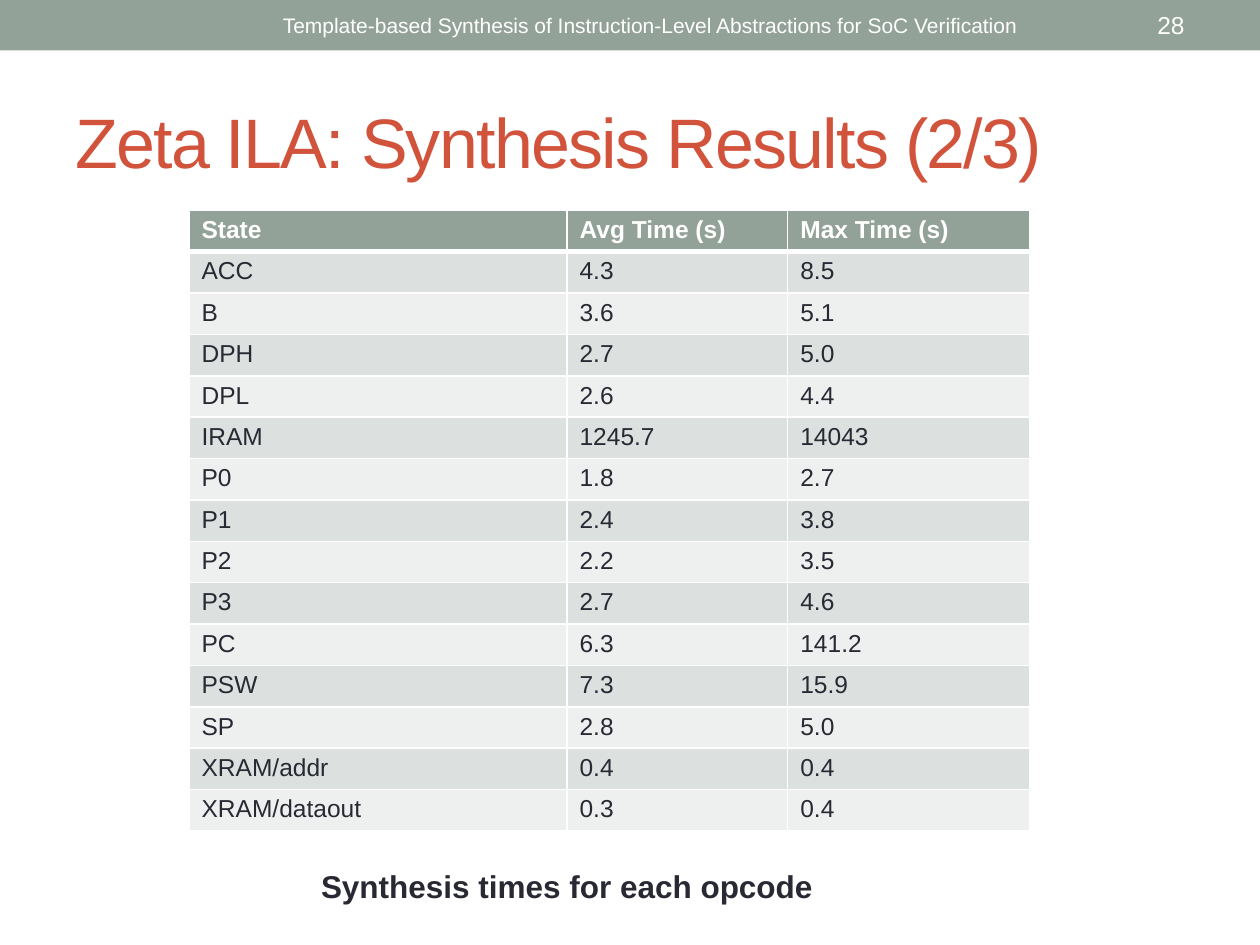
from lxml import etree
from pptx import Presentation
from pptx.dml.color import RGBColor
from pptx.enum import shapes, text
from pptx.oxml import parse_xml
from pptx.oxml.ns import nsdecls
from pptx.util import Cm, Pt


def style(p, size, color, bold=False):
    f = p.font
    f.name, f.size, f.bold = "Arial", Pt(size), bold
    f.color.rgb = RGBColor.from_string(color)


prs = Presentation()
prs.slide_width, prs.slide_height = Cm(25.4), Cm(19.05)
s = prs.slides.add_slide(prs.slide_layouts[6])

bar = s.shapes.add_shape(shapes.MSO_SHAPE.RECTANGLE, 0, 0, prs.slide_width, Cm(1.02))
bar.shadow.inherit = False
bar.fill.solid()
bar.fill.fore_color.rgb = RGBColor.from_string("93A299")
bar.line.fill.background()

LEFT, CENTER, RIGHT = text.PP_ALIGN.LEFT, text.PP_ALIGN.CENTER, text.PP_ALIGN.RIGHT
TOP, MIDDLE = text.MSO_ANCHOR.TOP, text.MSO_ANCHOR.MIDDLE
boxes = [
    ("Zeta ILA: Synthesis Results (2/3)", 1.27, 1.47, 22.86, 2.74, 40, "D2533C", False, LEFT, MIDDLE),
    ("Template-based Synthesis of Instruction-Level Abstractions for SoC Verification",
     5.28, 0.05, 15.67, 0.91, 12, "FFFFFF", False, CENTER, MIDDLE),
    ("28", 21.16, 0.05, 2.97, 0.91, 14, "FFFFFF", False, RIGHT, MIDDLE),
    ("Synthesis times for each opcode", 3.81, 17.35, 15.24, 1.02, 18, "292934", True, CENTER, TOP),
]
for words, x, y, w, h, size, color, bold, align, anchor in boxes:
    tf = s.shapes.add_textbox(Cm(x), Cm(y), Cm(w), Cm(h)).text_frame
    tf.word_wrap = True
    tf.vertical_anchor = anchor
    p = tf.paragraphs[0]
    r = p.add_run()
    r.text = words
    p.alignment = align
    style(p, size, color, bold)
    if size == 40:
        r.font._element.set("spc", "-100")

rows = [
    ("State", "Avg Time (s)", "Max Time (s)"),
    ("ACC", "4.3", "8.5"),
    ("B", "3.6", "5.1"),
    ("DPH", "2.7", "5.0"),
    ("DPL", "2.6", "4.4"),
    ("IRAM", "1245.7", "14043"),
    ("P0", "1.8", "2.7"),
    ("P1", "2.4", "3.8"),
    ("P2", "2.2", "3.5"),
    ("P3", "2.7", "4.6"),
    ("PC", "6.3", "141.2"),
    ("PSW", "7.3", "15.9"),
    ("SP", "2.8", "5.0"),
    ("XRAM/addr", "0.4", "0.4"),
    ("XRAM/dataout", "0.3", "0.4"),
]
widths = [7.62, 4.45, 4.87]
row_height = 0.81
table = s.shapes.add_table(len(rows), len(widths), Cm(3.81), Cm(4.24),
                           Cm(sum(widths)), Cm(row_height * len(rows))).table
for column, width in zip(table.columns, widths):
    column.width = Cm(width)
for i, values in enumerate(rows):
    table.rows[i].height = Cm(row_height)
    fill = "93A299" if i == 0 else "DCE0DE" if i % 2 else "EEF0EF"
    for j, value in enumerate(values):
        cell = table.cell(i, j)
        cell.margin_top = cell.margin_bottom = Cm(0.12)
        cell.text = value
        style(cell.text_frame.paragraphs[0], 14, "292934" if i else "FFFFFF", i == 0)
        tcPr = cell._tc.get_or_add_tcPr()
        for side in "LRTB":
            thick = (i, side) in ((0, "B"), (1, "T"))
            ln = parse_xml(f'<a:ln{side} {nsdecls("a")} w="{Pt(3 if thick else 1)}"/>')
            paint = etree.SubElement(ln, ln.tag.replace(f"ln{side}", "solidFill"))
            etree.SubElement(paint, ln.tag.replace(f"ln{side}", "srgbClr"), val="FFFFFF")
            tcPr.append(ln)
        cell.fill.solid()
        cell.fill.fore_color.rgb = RGBColor.from_string(fill)

prs.save("out.pptx")
